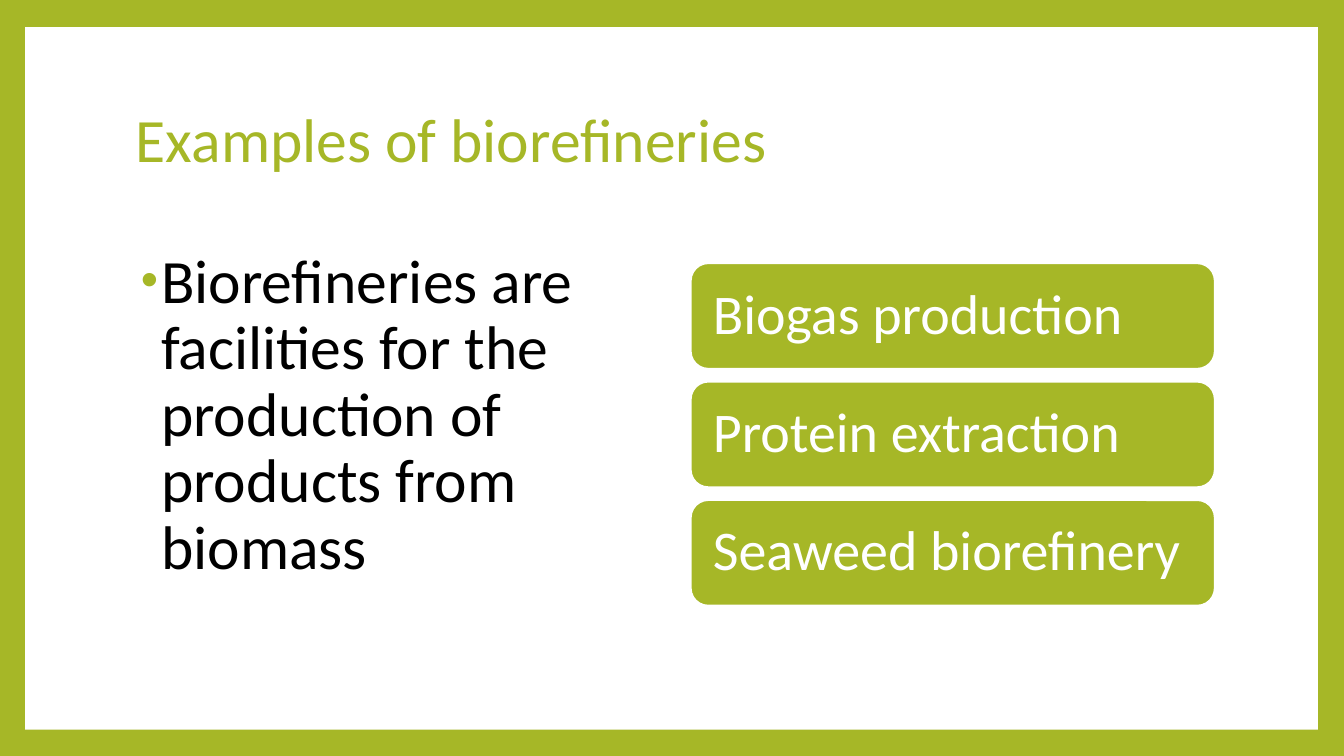
from lxml import etree
from pptx import Presentation
from pptx.dml.color import RGBColor
from pptx.enum.shapes import MSO_SHAPE
from pptx.enum.text import MSO_ANCHOR, PP_ALIGN
from pptx.oxml.ns import qn
from pptx.util import Inches, Pt

RECT = MSO_SHAPE.RECTANGLE
ROUNDED = MSO_SHAPE.ROUNDED_RECTANGLE
TOP, MIDDLE = MSO_ANCHOR.TOP, MSO_ANCHOR.MIDDLE
LEFT = PP_ALIGN.LEFT

FONT = "Calibri"
COLORS = {"green": "A6B727", "white": "FFFFFF", "black": "000000"}
EXAMPLES = ["Biogas production", "Protein extraction", "Seaweed biorefinery"]
BOX_TOP, BOX_PITCH = 2.61, 1.175


def rgb(name):
    return RGBColor.from_string(COLORS[name])


def add_box(s, kind, x, y, w, h, fill):
    sp = s.shapes.add_shape(kind, Inches(x), Inches(y), Inches(w), Inches(h))
    sp.shadow.inherit = False
    sp.fill.solid()
    sp.fill.fore_color.rgb = rgb(fill)
    sp.line.fill.background()
    return sp


def write(sp, text, size, color, anchor):
    """Fill a shape with one left-aligned paragraph and return it."""
    tf = sp.text_frame
    tf.word_wrap = True
    tf.vertical_anchor = anchor
    p = tf.paragraphs[0]
    p.text = text
    p.alignment = LEFT
    p.line_spacing = 0.9
    p.font.name = FONT
    p.font.size = Pt(size)
    p.font.color.rgb = rgb(color)
    return p


def add_text(s, x, y, w, h, text, color, anchor):
    sp = s.shapes.add_textbox(Inches(x), Inches(y), Inches(w), Inches(h))
    return write(sp, text, 44, color, anchor)


def add_bullet(p, color):
    pPr = p._p.get_or_add_pPr()
    pPr.set("marL", str(Inches(0.25)))
    pPr.set("indent", str(Inches(-0.2)))
    bullet = [
        etree.Element(qn("a:buClr")),
        etree.Element(qn("a:buSzPct"), val="80000"),
        etree.Element(qn("a:buFont"), typeface="Arial"),
        etree.Element(qn("a:buChar"), char="•"),
    ]
    etree.SubElement(bullet[0], qn("a:srgbClr"), val=COLORS[color])
    defaults = pPr.find(qn("a:defRPr"))
    for el in bullet:
        defaults.addprevious(el)


def add_example(s, y, text):
    sp = add_box(s, ROUNDED, 6.85, y, 5.2, 1.05, "green")
    sp.line.color.rgb = rgb("white")
    sp.line.width = Pt(1.5)
    tf = sp.text_frame
    tf.margin_left = tf.margin_right = Inches(0.17)
    write(sp, text, 40, "white", MIDDLE)


def main():
    prs = Presentation()
    prs.slide_width, prs.slide_height = Inches(13.33), Inches(7.5)
    s = prs.slides.add_slide(prs.slide_layouts[6])
    s.background.fill.solid()
    s.background.fill.fore_color.rgb = rgb("green")

    add_box(s, RECT, 0.25, 0.27, 12.82, 6.97, "white")
    add_text(s, 1.25, 0.67, 10.8, 1.48, "Examples of biorefineries", "green", MIDDLE)
    p = add_text(s, 1.25, 2.43, 5.2, 4.22,
                 "Biorefineries are facilities for the production of products from biomass",
                 "black", TOP)
    add_bullet(p, "green")
    for i, text in enumerate(EXAMPLES):
        add_example(s, BOX_TOP + i * BOX_PITCH, text)

    prs.save("out.pptx")


if __name__ == "__main__":
    main()
